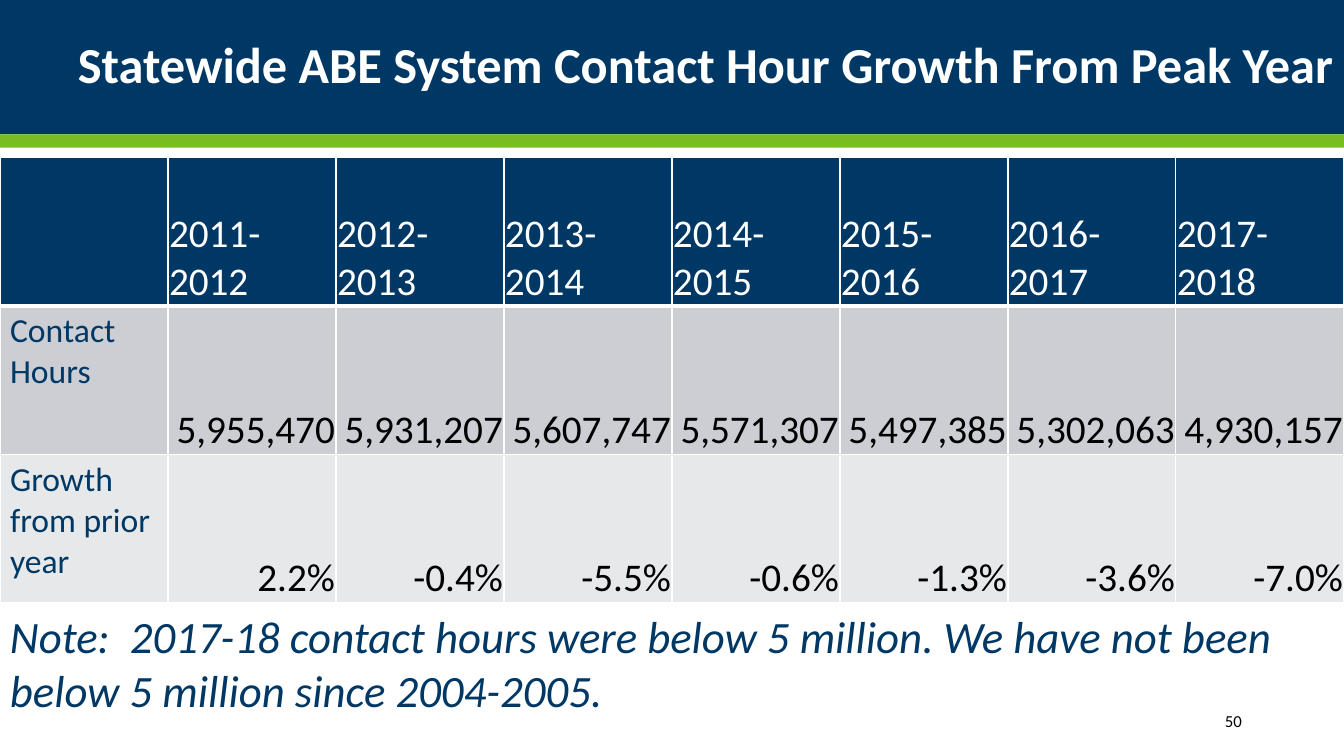
from dataclasses import dataclass

from lxml.etree import SubElement
from pptx import Presentation
from pptx.dml.color import RGBColor
from pptx.enum.shapes import MSO_SHAPE
from pptx.enum.text import MSO_ANCHOR, MSO_AUTO_SIZE, PP_ALIGN
from pptx.oxml.ns import qn
from pptx.util import Pt

NAVY, GREEN, WHITE, BLACK = "003865", "78BE21", "FFFFFF", "000000"
WIDTH, HEIGHT = 960, 540
ROW_HEIGHT = 106


@dataclass
class Band:
    top: float
    height: float
    color: str


@dataclass
class TextStyle:
    size: float
    color: str
    align: PP_ALIGN = PP_ALIGN.LEFT
    bold: bool = False
    italic: bool = False


@dataclass
class Record:
    label: str
    values: list[str]
    fill: str
    value_style: TextStyle
    top_line: float = 1
    bottom_line: float = 1


def rgb(color: str) -> RGBColor:
    return RGBColor.from_string(color)


def write(frame, text: str, style: TextStyle) -> None:
    for index, line in enumerate(text.split("\n")):
        paragraph = frame.paragraphs[0] if index == 0 else frame.add_paragraph()
        paragraph.alignment = style.align
        if not line:
            continue
        run = paragraph.add_run()
        run.text = line
        run.font.name = "Calibri"
        run.font.size = Pt(style.size)
        run.font.bold = style.bold
        run.font.italic = style.italic
        run.font.color.rgb = rgb(style.color)


def draw_band(slide, band: Band) -> None:
    stripe = slide.shapes.add_shape(
        MSO_SHAPE.RECTANGLE, Pt(0), Pt(band.top), Pt(WIDTH), Pt(band.height))
    stripe.shadow.inherit = False
    stripe.fill.solid()
    stripe.fill.fore_color.rgb = rgb(band.color)
    stripe.line.fill.background()


def draw_title(slide, text: str) -> None:
    title = slide.shapes.title
    title.left, title.top, title.width, title.height = Pt(0), Pt(12), Pt(WIDTH), Pt(72)
    title.element.getparent().append(title.element)
    frame = title.text_frame
    frame.word_wrap = True
    frame.auto_size = MSO_AUTO_SIZE.NONE
    frame.vertical_anchor = MSO_ANCHOR.MIDDLE
    write(frame, text, TextStyle(36, WHITE, PP_ALIGN.RIGHT, bold=True))
    frame.paragraphs[0].line_spacing = 0.9


def format_cell(cell, record: Record) -> None:
    properties = cell._tc.get_or_add_tcPr()
    borders = {"a:lnL": 1, "a:lnR": 1,
               "a:lnT": record.top_line, "a:lnB": record.bottom_line}
    for tag, points in borders.items():
        border = SubElement(properties, qn(tag), w=str(Pt(points)))
        fill = SubElement(border, qn("a:solidFill"))
        SubElement(fill, qn("a:srgbClr"), val=WHITE)
    cell.fill.solid()
    cell.fill.fore_color.rgb = rgb(record.fill)


def draw_table(slide, records: list[Record]) -> None:
    columns = len(records[0].values) + 1
    table = slide.shapes.add_table(
        len(records), columns, Pt(0), Pt(112.4),
        Pt(WIDTH), Pt(ROW_HEIGHT * len(records))).table
    for column in table.columns:
        column.width = Pt(WIDTH / columns)
    for row, record in zip(table.rows, records):
        row.height = Pt(ROW_HEIGHT)
        for index, text in enumerate([record.label, *record.values]):
            cell = row.cells[index]
            format_cell(cell, record)
            if index == 0:
                write(cell.text_frame, text, TextStyle(24, NAVY))
                continue
            cell.vertical_anchor = MSO_ANCHOR.BOTTOM
            cell.margin_left = cell.margin_right = cell.margin_top = Pt(0.75)
            cell.margin_bottom = Pt(0)
            write(cell.text_frame, text, record.value_style)


def draw_text(slide, left: float, top: float, width: float, height: float,
              text: str, style: TextStyle, anchor: MSO_ANCHOR,
              auto_size: MSO_AUTO_SIZE) -> None:
    frame = slide.shapes.add_textbox(
        Pt(left), Pt(top), Pt(width), Pt(height)).text_frame
    frame.word_wrap = True
    frame.auto_size = auto_size
    frame.vertical_anchor = anchor
    write(frame, text, style)


def main() -> None:
    deck = Presentation()
    deck.slide_width, deck.slide_height = Pt(WIDTH), Pt(HEIGHT)
    slide = deck.slides.add_slide(deck.slide_layouts[5])

    for band in (Band(0, 96, NAVY), Band(96, 9.4, GREEN)):
        draw_band(slide, band)
    draw_title(slide, "Statewide ABE System Contact Hour Growth From Peak Year")

    figures = TextStyle(28, BLACK, PP_ALIGN.RIGHT)
    school_years = [f"{year}-{year + 1}" for year in range(2011, 2018)]
    contact_hours = ["5,955,470", "5,931,207", "5,607,747", "5,571,307",
                     "5,497,385", "5,302,063", "4,930,157"]
    growth = ["2.2%", "-0.4%", "-5.5%", "-0.6%", "-1.3%", "-3.6%", "-7.0%"]
    draw_table(slide, [
        Record("", school_years, NAVY, TextStyle(28, WHITE), bottom_line=3),
        Record("Contact\nHours", contact_hours, "CCCED3", figures, top_line=3),
        Record("Growth from prior year", growth, "E7E8EA", figures),
    ])

    draw_text(slide, 779, 500.4, 115.2, 28.8, "50",
              TextStyle(12, BLACK, PP_ALIGN.RIGHT),
              MSO_ANCHOR.MIDDLE, MSO_AUTO_SIZE.NONE)
    draw_text(slide, 0, 431.3, WIDTH, 85,
              "Note:  2017-18 contact hours were below 5 million. "
              "We have not been below 5 million since 2004-2005.",
              TextStyle(32, NAVY, italic=True),
              MSO_ANCHOR.TOP, MSO_AUTO_SIZE.SHAPE_TO_FIT_TEXT)
    deck.save("out.pptx")


if __name__ == "__main__":
    main()
